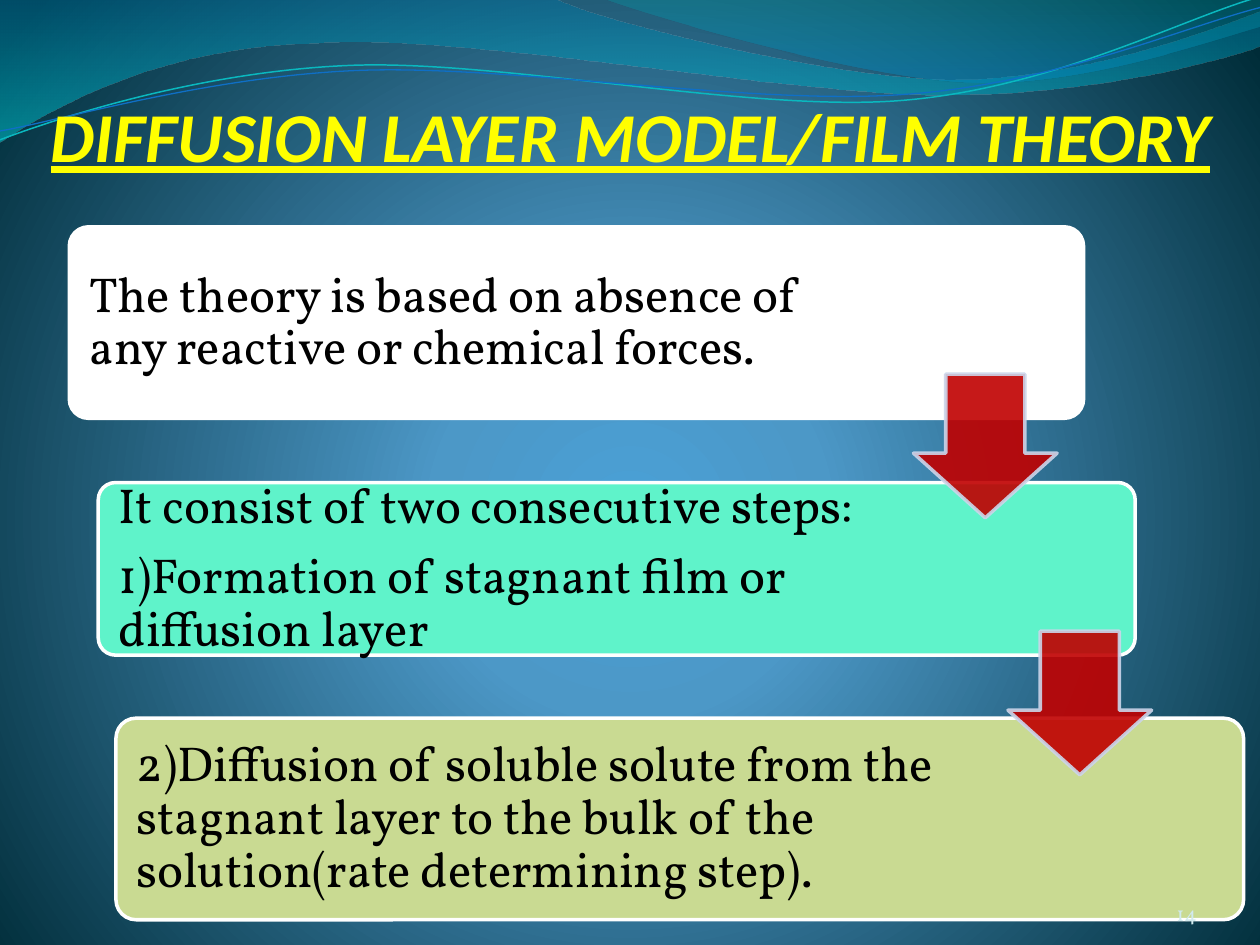
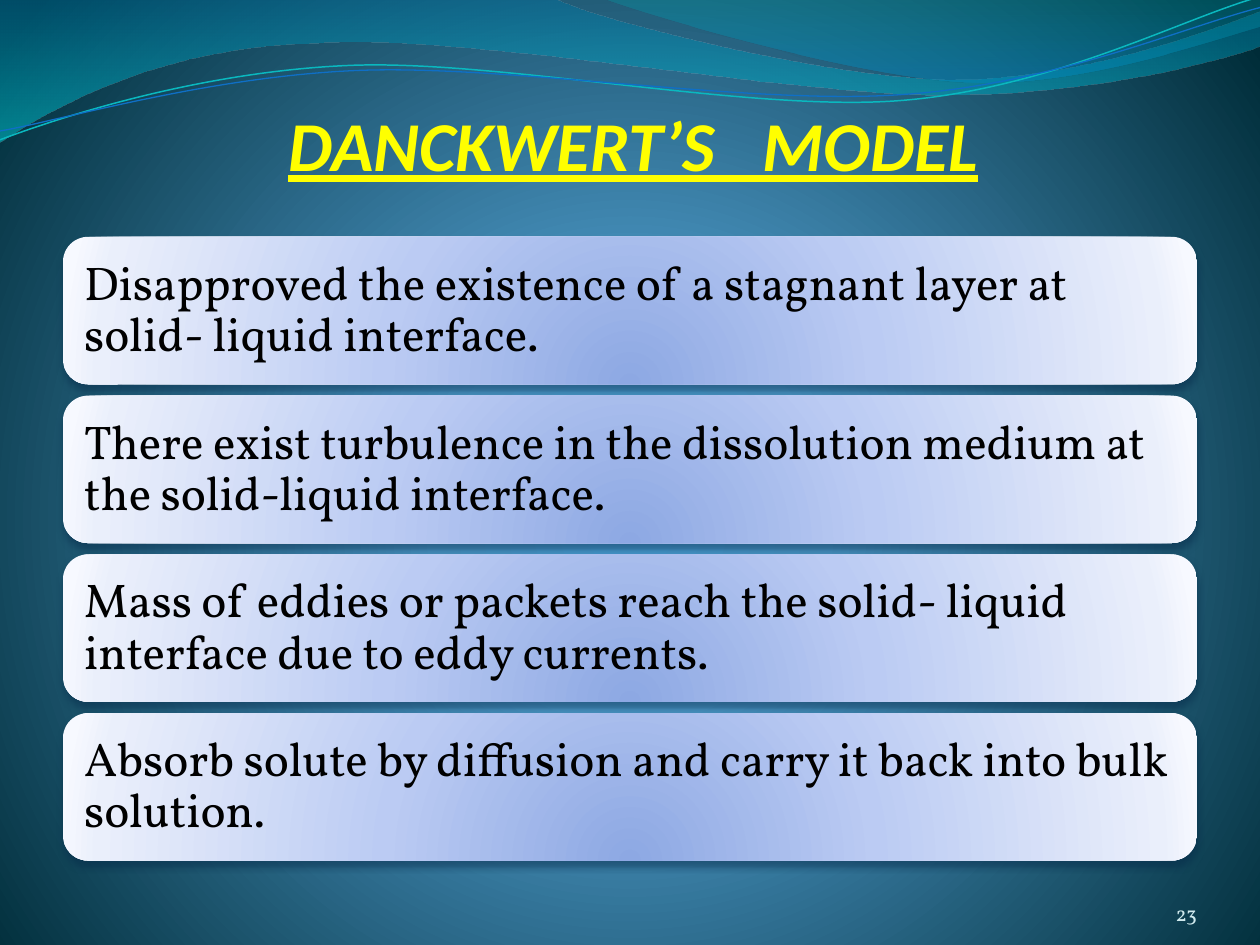
from lxml.etree import SubElement
from pptx import Presentation
from pptx.dml.color import RGBColor
from pptx.enum.shapes import MSO_SHAPE as SHAPE
from pptx.enum.text import MSO_ANCHOR as ANCHOR, MSO_AUTO_SIZE as AUTO_SIZE, PP_ALIGN as ALIGN
from pptx.oxml import parse_xml
from pptx.oxml.ns import nsdecls, qn
from pptx.util import Inches, Pt

# Colours
YELLOW = RGBColor(0xFF, 0xFF, 0x00)
BLACK = RGBColor(0x00, 0x00, 0x00)
WHITE = RGBColor(0xFF, 0xFF, 0xFF)
MINT = RGBColor(0x5F, 0xF3, 0xCA)
OLIVE = RGBColor(0xC9, 0xDA, 0x92)
RED = RGBColor(0xC0, 0x00, 0x00)
PALE_BLUE = RGBColor(0xCC, 0xD5, 0xEA)
PALE_CYAN = RGBColor(0xD1, 0xEA, 0xEE)
TEAL_LINE = RGBColor(0x0A, 0xB8, 0xBF)
BLUE_LINE = RGBColor(0x0F, 0x6F, 0xC6)
SHADOW = RGBColor(0x04, 0x27, 0x47)

# Gradients: (position %, colour, opacity %)
BACKGROUND = [(0, RGBColor(0x4A, 0xA0, 0xD6), 100), (25, RGBColor(0x4C, 0x98, 0xC7), 100),
              (100, RGBColor(0x00, 0x2C, 0x38), 100)]
LEFT_WAVE = [(0, RGBColor(0x00, 0x74, 0xA1), 45), (100, RGBColor(0x00, 0xC6, 0xCF), 55)]
RIGHT_WAVE = [(0, RGBColor(0x00, 0xA1, 0xA9), 30), (80, RGBColor(0x00, 0x8B, 0xBF), 45)]
PERIWINKLE = [(0, RGBColor(0x8D, 0xA8, 0xE3), 100), (43, RGBColor(0xBB, 0xCB, 0xF3), 100),
              (93, RGBColor(0xEA, 0xEF, 0xFB), 100), (100, RGBColor(0xF7, 0xF9, 0xFF), 100)]

# Wave outlines in inches: two numbers are a corner, six are a Bezier curve
LEFT_WAVE_PATH = [
    (0, 0), (4.4, -0.01), (4.76, 0.17, 6.64, 0.63, 7.58, 0.63),
    (8.53, 0.63, 9.58, 0.26, 10, 0.09), (10.01, 0.36),
    (9.83, 0.44, 8.7, 0.76, 7.46, 0.75), (6.22, 0.75, 3.82, 0.28, 2.57, 0.34),
    (1.29, 0.36, 0.46, 0.83, -0.01, 1.13)]
RIGHT_WAVE_PATH = [
    (4.79, -0.01), (5.09, 0.11, 6.82, 0.62, 7.69, 0.65),
    (8.56, 0.69, 9.61, 0.32, 10, 0.21), (10, 0)]
TEAL_PATH = [
    (0, 1.11), (0.48, 0.93, 1.58, 0.57, 2.77, 0.52),
    (3.95, 0.47, 5.93, 0.89, 7.13, 0.8), (8.33, 0.71, 9.38, 0.15, 9.98, -0.02)]
BLUE_PATH = [
    (0, 1.04), (0.47, 0.96, 1.64, 0.61, 2.83, 0.56),
    (4.03, 0.51, 5.97, 0.84, 7.17, 0.75), (8.36, 0.67, 9.41, 0.21, 10, 0.06)]

TITLE_FONT, BODY_FONT = "Calibri", "Vollkorn"
CORNER_INSET = 0.29  # share of a corner radius that text keeps clear


def bend(sp, outline):
    """Join the three segments that stand for each curve into one Bezier curve."""
    segments = iter(list(sp.element.iter(qn("a:lnTo"))))
    for part in outline[1:]:
        lines = [next(segments) for _ in range(len(part) // 2)]
        if len(lines) == 3:
            curve = parse_xml(f'<a:cubicBezTo {nsdecls("a")}/>')
            lines[0].addprevious(curve)
            for line in lines:
                curve.append(line[0])
                line.getparent().remove(line)


def set_gradient(fill, element, stops, centre=None):
    """Fill with a radial gradient round centre (l, t, r, b), or from top to bottom."""
    fill.gradient()
    stop_xml = "".join(
        f'<a:gs pos="{pos * 1000}"><a:srgbClr val="{color}">'
        f'<a:alpha val="{alpha * 1000}"/></a:srgbClr></a:gs>' for pos, color, alpha in stops)
    if centre:
        sides = " ".join(f'{side}="{v * 1000}"' for side, v in zip("ltrb", centre))
        direction = f'<a:path path="circle"><a:fillToRect {sides}/></a:path>'
    else:
        direction = '<a:lin ang="5400000" scaled="0"/>'
    old = next(element.iter(qn("a:gradFill")))
    old.getparent().replace(old, parse_xml(
        f'<a:gradFill {nsdecls("a")} rotWithShape="1"><a:gsLst>{stop_xml}</a:gsLst>'
        f'{direction}</a:gradFill>'))


class Deck:
    def __init__(self):
        self.prs = Presentation()
        self.prs.slide_width, self.prs.slide_height = Inches(10), Inches(7.5)
        self.s = None

    def slide(self, title, title_box):
        self.s = self.prs.slides.add_slide(self.prs.slide_layouts[5])
        set_gradient(self.s.background.fill, self.s.element, BACKGROUND, (10, 110, 10, 100))
        # Waves along the top
        self.wave(LEFT_WAVE_PATH, stops=LEFT_WAVE)
        self.wave(RIGHT_WAVE_PATH, stops=RIGHT_WAVE)
        self.wave(TEAL_PATH, color=TEAL_LINE, width=0.85)
        self.wave(BLUE_PATH, color=BLUE_LINE, width=0.75)
        self.title(title, title_box)

    def wave(self, outline, stops=None, color=None, width=None):
        points = [(Inches(x), Inches(y)) for part in outline
                  for x, y in zip(part[::2], part[1::2])]
        builder = self.s.shapes.build_freeform(*points[0])
        builder.add_line_segments(points[1:], close=stops is not None)
        sp = builder.convert_to_shape()
        bend(sp, outline)
        sp.shadow.inherit = False
        if stops:
            set_gradient(sp.fill, sp.element, stops)
            sp.line.fill.background()
        else:
            sp.fill.background()
            self.outline(sp, color, width)

    def outline(self, sp, color, width):
        sp.line.color.rgb = color
        sp.line.width = Pt(width)

    def frame(self, sp, anchor, margins):
        tf = sp.text_frame
        tf.word_wrap = True
        tf.auto_size = AUTO_SIZE.NONE
        tf.vertical_anchor = anchor
        tf.margin_left, tf.margin_top, tf.margin_right, tf.margin_bottom = map(Inches, margins)
        return tf

    def run(self, p, text, font, size, color):
        r = p.add_run()
        r.text = text
        r.font.name, r.font.size = font, Pt(size)
        r.font.color.rgb = color
        return r

    def title(self, text, box):
        sp = self.s.shapes.title
        sp.element.getparent().append(sp.element)  # in front of the waves
        sp.left, sp.top, sp.width, sp.height = map(Inches, box)
        p = self.frame(sp, ANCHOR.BOTTOM, (0, 0.05, 0, 0)).paragraphs[0]
        p.alignment = ALIGN.CENTER
        r = self.run(p, text, TITLE_FONT, 40, YELLOW)
        r.font.bold = r.font.italic = r.font.underline = True

    def number(self, value):
        sp = self.s.shapes.add_textbox(Inches(8.67), Inches(6.95), Inches(0.83), Inches(0.4))
        p = self.frame(sp, ANCHOR.BOTTOM, (0, 0, 0, 0)).paragraphs[0]
        p.alignment = ALIGN.RIGHT
        self.run(p, str(value), BODY_FONT, 12, PALE_CYAN)

    def card(self, box, lines, size, margin, corner, text_width):
        left, top, width, height = box
        sp = self.s.shapes.add_shape(SHAPE.ROUNDED_RECTANGLE, *map(Inches, box))
        sp.shadow.inherit = False
        sp.adjustments[0] = corner
        # Text inside the rounded corners
        inset = CORNER_INSET * corner * height
        text_box = (left + inset, top + inset, text_width, height - 2 * inset)
        tb = self.s.shapes.add_textbox(*map(Inches, text_box))
        tf = self.frame(tb, ANCHOR.MIDDLE, [margin] * 4)
        for i, line in enumerate(lines):
            p = tf.add_paragraph() if i else tf.paragraphs[0]
            p.line_spacing = 0.9
            p.space_after = Pt(round(0.35 * size))
            self.run(p, line, BODY_FONT, size, BLACK)
        return sp

    def step_card(self, box, color, lines, text_width):
        sp = self.card(box, lines, 28, 0.12, 0.1, text_width)
        sp.fill.solid()
        sp.fill.fore_color.rgb = color
        self.outline(sp, WHITE, 2)

    def point_card(self, box, line):
        sp = self.card(box, [line], 27, 0.11, 0.17, 8.89)
        set_gradient(sp.fill, sp.element, PERIWINKLE, (50, 130, 50, -30))
        sp.line.fill.background()
        effects = next(sp.element.iter(qn("a:effectLst")))
        effects.append(parse_xml(
            f'<a:outerShdw {nsdecls("a")} blurRad="{Pt(4.5)}" dist="{Pt(3)}" dir="5400000" '
            f'rotWithShape="0"><a:srgbClr val="{SHADOW}"><a:alpha val="48000"/></a:srgbClr>'
            '</a:outerShdw>'))

    def arrow(self, left, top):
        sp = self.s.shapes.add_shape(SHAPE.DOWN_ARROW, Inches(left), Inches(top),
                                     Inches(1.14), Inches(1.14))
        sp.shadow.inherit = False
        sp.adjustments[0], sp.adjustments[1] = 0.55, 0.45
        sp.fill.solid()
        sp.fill.fore_color.rgb = RED
        self.outline(sp, PALE_BLUE, 2)
        for color in sp.element.spPr.iter(qn("a:srgbClr")):
            SubElement(color, qn("a:alpha")).set("val", "90000")


def diffusion_layer(deck):
    deck.slide("DIFFUSION LAYER MODEL/FILM THEORY", (0.23, 0.23, 9.55, 1.17))
    # Steps, each further right than the last
    deck.step_card((0.55, 1.8, 8.05, 1.52), WHITE, [
        "The theory is based on absence of any reactive or chemical forces."], 6.26)
    deck.step_card((0.78, 3.83, 8.23, 1.37), MINT, [
        "It consist of two consecutive steps:",
        "1)Formation of stagnant film or diffusion layer"], 6.32)
    deck.step_card((0.92, 5.7, 8.95, 1.6), OLIVE, [
        "2)Diffusion of soluble solute from the stagnant layer to the bulk of the "
        "solution(rate determining step)."], 6.86)
    # Arrows between the steps
    deck.arrow(7.25, 2.97)
    deck.arrow(8, 5.01)
    deck.number(14)


def danckwert(deck):
    deck.slide("DANCKWERT’S   MODEL", (1.33, 0.47, 7.39, 1))
    # Evenly stacked points
    points = [
        "Disapproved the existence of a stagnant layer at solid- liquid interface.",
        "There exist turbulence in the dissolution medium at the solid-liquid interface.",
        "Mass of eddies or packets reach the solid- liquid interface due to eddy currents.",
        "Absorb solute by diffusion and carry it back into bulk solution."]
    for i, point in enumerate(points):
        deck.point_card((0.5, 1.88 + 1.26 * i, 9, 1.17), point)
    deck.number(23)


def main():
    deck = Deck()
    diffusion_layer(deck)
    danckwert(deck)
    deck.prs.save("out.pptx")


if __name__ == "__main__":
    main()
